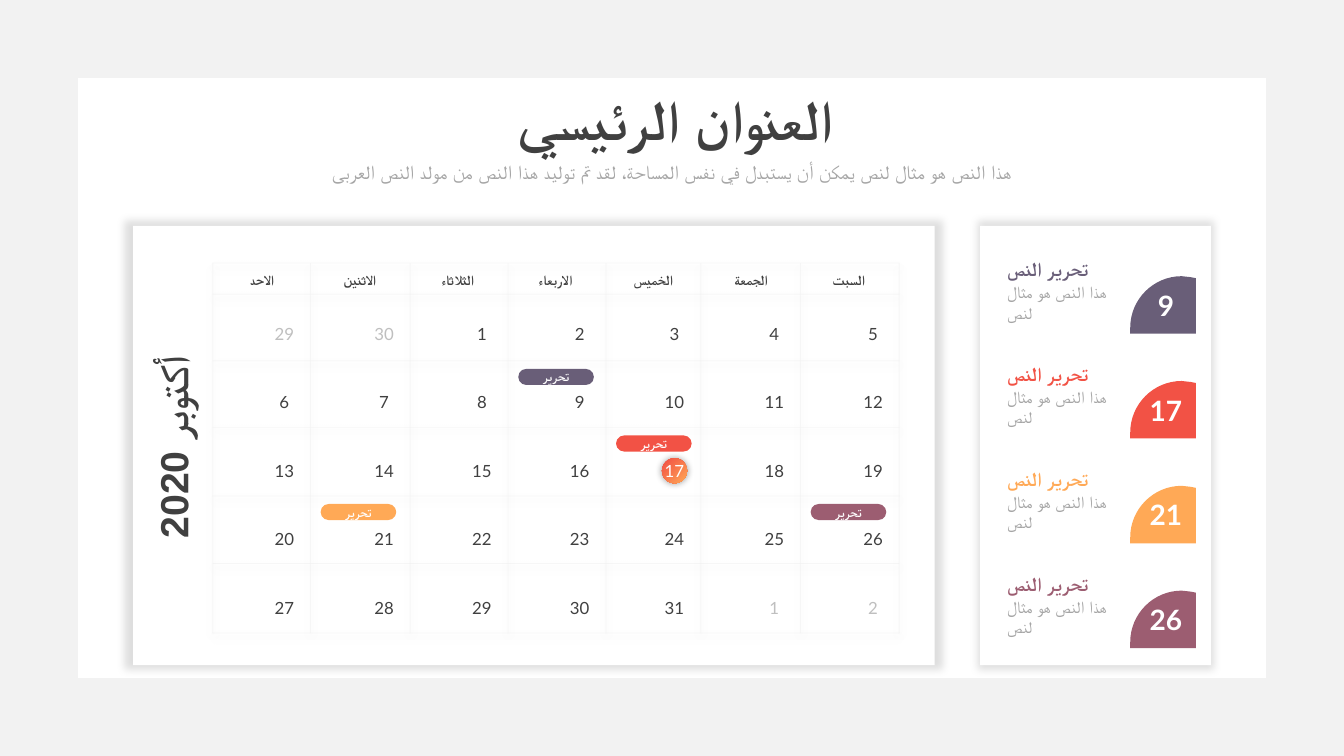
from lxml import etree
from pptx import Presentation
from pptx.dml.color import RGBColor
from pptx.enum.shapes import MSO_CONNECTOR, MSO_SHAPE
from pptx.enum.text import MSO_ANCHOR, MSO_AUTO_SIZE, PP_ALIGN
from pptx.oxml.ns import qn
from pptx.util import Inches, Pt

FRAME, RECTANGLE = MSO_SHAPE.FRAME, MSO_SHAPE.RECTANGLE
OVAL, PILL = MSO_SHAPE.OVAL, MSO_SHAPE.ROUNDED_RECTANGLE
STRAIGHT = MSO_CONNECTOR.STRAIGHT
CENTER, LEFT = PP_ALIGN.CENTER, PP_ALIGN.LEFT
MIDDLE, GROW = MSO_ANCHOR.MIDDLE, MSO_AUTO_SIZE.SHAPE_TO_FIT_TEXT

FONT, ARABIC_FONT = "Lato", "Arial"
COLORS = {
    "white": "FFFFFF", "frame": "F2F2F2", "dark": "404040",
    "muted": "BFBFBF", "gray": "A6A6A6", "violet": "695E78",
    "red": "F25245", "orange": "FFA956", "plum": "9C5D71",
}

COLUMN_EDGES = [2.11, 3.08, 4.07, 5.04, 6.01, 6.95, 7.94, 8.92]
GRID_TOP = 2.61
WEEK_EDGES = [2.92, 3.58, 4.24, 4.92, 5.59, 6.28]
WEEKDAY_STEP = 0.97
DAY_WIDTH, DAY_HEIGHT, DAY_TOP, DAY_STEP = 0.46, 0.3, 3.16, 0.68
PANEL_TOP, PANEL_HEIGHT = 2.24, 4.36
CARD_TOP, CARD_STEP = 2.4, 1.04

WEEKDAYS = ["الاحد", "الاثنين", "الثلاثاء", "الاربعاء", "الخميس", "الجمعة", "السبت"]
DAYS = [29, 30, *range(1, 32), 1, 2]
FIRST_DAY = DAYS.index(1)
SELECTED_DAY = 17
EVENTS = [(9, "violet", 1.39), (17, "red", 1.39), (21, "orange", 1.46), (26, "plum", 1.34)]


def rgb(name):
    return RGBColor.from_string(COLORS[name])


def cast_shadow(properties, opacity, blur, distance=0, direction=0, scale=100):
    effects = properties.find(qn("a:effectLst"))
    if effects is None:
        effects = etree.SubElement(properties, qn("a:effectLst"))
    shadow = etree.SubElement(
        effects, qn("a:outerShdw"), blurRad=str(Pt(blur)), dist=str(Pt(distance)),
        dir=str(direction * 60000), sx=str(scale * 1000), sy=str(scale * 1000),
        algn="ctr", rotWithShape="0")
    color = etree.SubElement(shadow, qn("a:srgbClr"), val="000000")
    etree.SubElement(color, qn("a:alpha"), val=str(opacity * 1000))


def style_shape(shape, color):
    shape.fill.solid()
    shape.fill.fore_color.rgb = rgb(color)
    shape.line.fill.background()
    shape.shadow.inherit = False
    return shape


def add_block(slide, kind, left, top, width, height, color):
    shape = slide.shapes.add_shape(
        kind, Inches(left), Inches(top), Inches(width), Inches(height))
    return style_shape(shape, color)


def write(shape, text, size, color, bold=False, align=CENTER):
    paragraph = shape.text_frame.paragraphs[0]
    paragraph.text = text
    paragraph.alignment = align
    font = paragraph.font
    font.name, font.size, font.bold = FONT, Pt(size), bold
    font.color.rgb = rgb(color)
    defaults = paragraph._p.pPr.find(qn("a:defRPr"))
    etree.SubElement(defaults, qn("a:cs"), typeface=ARABIC_FONT)


def add_text(slide, left, top, width, height, text, size, color, bold=False, align=CENTER):
    box = slide.shapes.add_textbox(
        Inches(left), Inches(top), Inches(width), Inches(height))
    box.text_frame.word_wrap = True
    box.text_frame.auto_size = GROW
    write(box, text, size, color, bold, align)
    return box


def add_panel(slide, left, width):
    panel = add_block(slide, RECTANGLE, left, PANEL_TOP, width, PANEL_HEIGHT, "white")
    cast_shadow(panel._element.spPr, 12, 6, scale=102)


def add_rule(slide, x1, y1, x2, y2):
    rule = slide.shapes.add_connector(
        STRAIGHT, Inches(x1), Inches(y1), Inches(x2), Inches(y2))
    rule.line.width = Pt(0.5)
    rule.line.color.rgb = rgb("frame")
    properties = rule._element.spPr
    color = properties.find(".//" + qn("a:srgbClr"))
    etree.SubElement(color, qn("a:alpha"), val="60000")
    cast_shadow(properties, 12, 6, 3, 90)


def add_grid(slide):
    for y in [GRID_TOP, *WEEK_EDGES]:
        add_rule(slide, COLUMN_EDGES[0], y, COLUMN_EDGES[-1], y)
    for x in COLUMN_EDGES:
        add_rule(slide, x, WEEK_EDGES[-1], x, GRID_TOP)


def add_day_marker(slide, day_left, day_top):
    size = 0.25
    marker = add_block(
        slide, OVAL, day_left + (DAY_WIDTH - size) / 2,
        day_top + (DAY_HEIGHT - size) / 2, size, size, "red")
    marker.fill.gradient()
    marker.fill.gradient_angle = 315
    for stop, position, color in zip(marker.fill.gradient_stops, (0.07, 1), ("red", "orange")):
        stop.position = position
        stop.color.rgb = rgb(color)
    cast_shadow(marker._element.spPr, 40, 5)


def add_days(slide):
    for index, day in enumerate(DAYS):
        row, column = divmod(index, 7)
        left = COLUMN_EDGES[column + 1] - 0.49
        top = DAY_TOP + row * DAY_STEP
        color = "dark" if FIRST_DAY <= index < FIRST_DAY + 31 else "muted"
        if day == SELECTED_DAY:
            add_day_marker(slide, left, top)
            color = "white"
        add_text(slide, left, top, DAY_WIDTH, DAY_HEIGHT, str(day), 12, color)


def add_tag(slide, day, color):
    row, column = divmod(FIRST_DAY + day - 1, 7)
    tag = add_block(
        slide, PILL, COLUMN_EDGES[column] + 0.1, WEEK_EDGES[row] + 0.08, 0.75, 0.16, color)
    tag.adjustments[0] = 0.5
    frame = tag.text_frame
    frame.margin_left = frame.margin_right = frame.margin_top = frame.margin_bottom = 0
    frame.vertical_anchor = MIDDLE
    write(tag, "تحرير", 9, "white", True)


def add_badge(slide, top, color):
    left, width, height, radius = 11.21, 0.65, 0.57, 0.51
    outline = [(radius, 0), (0.6, 0.01), (width, 0.02), (width, height),
               (0, height), (0, radius), (radius, 0)]
    points = [(Inches(left + x), Inches(top + y)) for x, y in outline]
    builder = slide.shapes.build_freeform(*points[0], scale=1.0)
    builder.add_line_segments(points[1:], close=True)
    badge = style_shape(builder.convert_to_shape(), color)

    arc = badge._element.findall(".//" + qn("a:lnTo"))[-1]
    arc.tag = qn("a:cubicBezTo")
    for index, (x, y) in enumerate([(0, 0.23), (0.23, 0)]):
        control = etree.Element(qn("a:pt"), x=str(Inches(x)), y=str(Inches(y)))
        arc.insert(index, control)


def add_card(slide, top, day, color, body_width):
    add_block(slide, RECTANGLE, 9.87, top, 1.99, 0.91, "white")
    add_badge(slide, top + 0.34, color)
    add_text(slide, 9.89, top + 0.35, body_width, 0.5,
             "هذا النص هو مثال لنص", 12, "gray", align=LEFT)
    add_text(slide, 9.89, top + 0.1, 1.84, 0.34, "تحرير النص", 14, color, True, LEFT)
    add_text(slide, 11.28, top + 0.41, 0.57, 0.44, str(day), 20, "white", True)


def main():
    presentation = Presentation()
    presentation.slide_width, presentation.slide_height = Inches(13.33), Inches(7.5)
    slide = presentation.slides.add_slide(presentation.slide_layouts[6])

    border = add_block(slide, FRAME, 0, 0, 13.33, 7.5, "frame")
    border.adjustments[0] = 0.103
    add_text(slide, 0.81, 0.79, 11.78, 0.77, "العنوان الرئيسي", 40, "dark", True)
    add_text(slide, 2.41, 1.54, 8.51, 0.57,
             "هذا النص هو مثال لنص يمكن أن يستبدل في نفس المساحة، "
             "لقد تم توليد هذا النص من مولد النص العربى", 14, "gray")

    add_panel(slide, 1.32, 7.95)
    add_grid(slide)
    for column, weekday in enumerate(WEEKDAYS):
        add_text(slide, 2.16 + column * WEEKDAY_STEP, 2.64, 0.88, 0.27, weekday, 10, "dark", True)
    add_days(slide)
    month = add_text(slide, 0.15, 4.15, 3.13, 0.57, "أكتوبر 2020", 28, "dark", True)
    month.rotation = 270

    add_panel(slide, 9.72, 2.29)
    for index, (day, color, body_width) in enumerate(EVENTS):
        add_tag(slide, day, color)
        add_card(slide, CARD_TOP + index * CARD_STEP, day, color, body_width)

    presentation.save("out.pptx")


if __name__ == "__main__":
    main()
